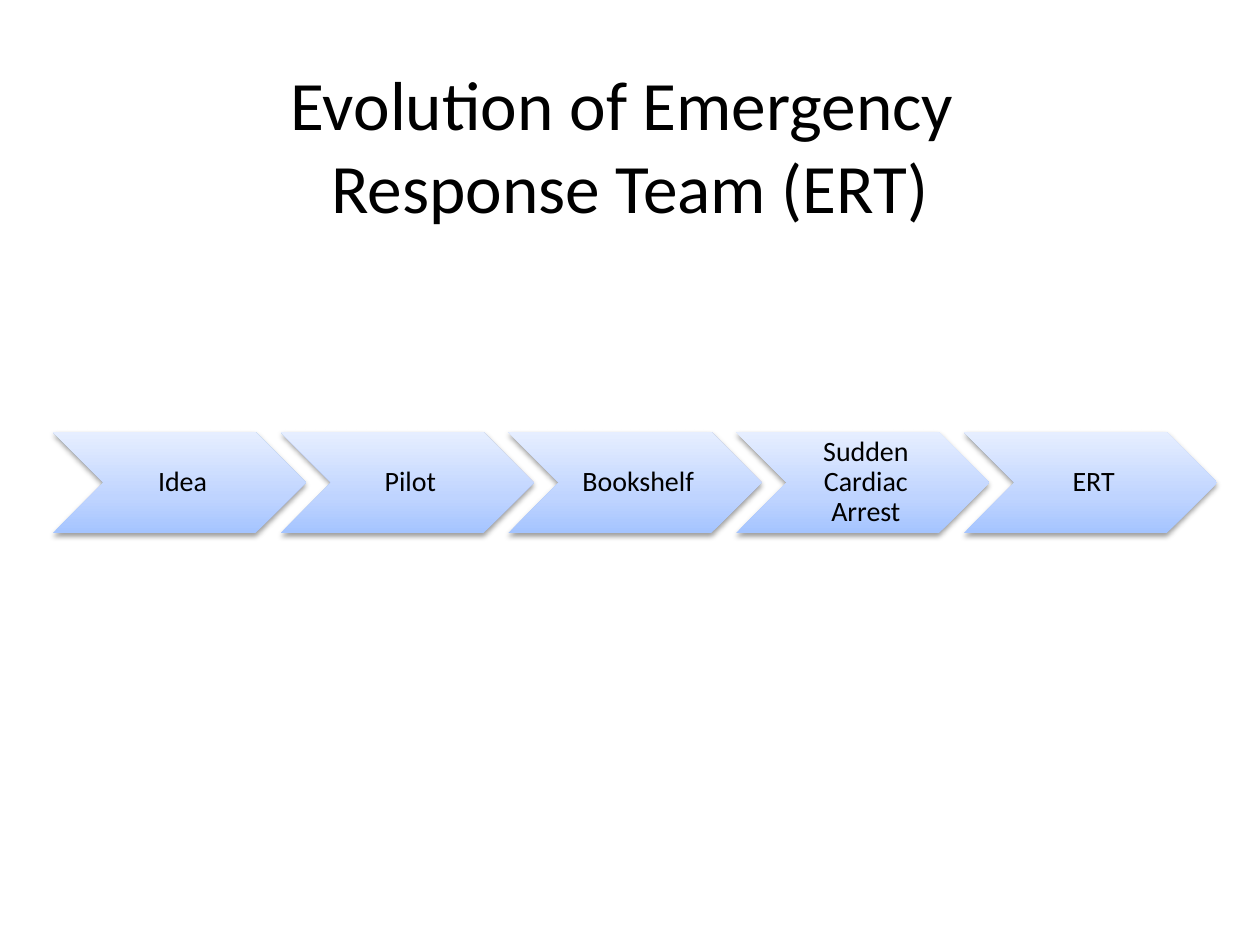
import pptx
import pptx.dml.color
import pptx.enum.shapes
import pptx.enum.text
import pptx.oxml
import pptx.oxml.ns
import pptx.util
from dataclasses import dataclass
from pptx.util import Inches


@dataclass(frozen=True)
class Theme:
    font: str = "Calibri"
    text: str = "000000"
    title_size: float = 39.6
    label_size: float = 16
    # Gradient stops in percent, running from bottom to top
    gradient: tuple = ((0, "A4C4FF"), (35, "BFD4FF"), (100, "E6EEFF"))
    shadow: str = "000000"


THEME = Theme()
NAMESPACE = pptx.oxml.ns.nsdecls("a")
STAGES = ["Idea", "Pilot", "Bookshelf", "Sudden Cardiac Arrest", "ERT"]


def set_attributes(target, values):
    for name, value in values.items():
        setattr(target, name, value)


def write_text(shape, text, size, margins, line_spacing):
    """Write one centred paragraph into a shape."""
    frame = shape.text_frame
    frame.text = text
    set_attributes(frame, {
        "word_wrap": True,
        "auto_size": pptx.enum.text.MSO_AUTO_SIZE.NONE,
        "vertical_anchor": pptx.enum.text.MSO_ANCHOR.MIDDLE,
        **{f"margin_{side}": Inches(value) for side, value in margins.items()},
    })
    paragraph = frame.paragraphs[0]
    set_attributes(paragraph, {
        "alignment": pptx.enum.text.PP_ALIGN.CENTER,
        "line_spacing": line_spacing,
    })
    for run in paragraph.runs:
        set_attributes(run.font, {"name": THEME.font, "size": pptx.util.Pt(size)})
        run.font.color.rgb = pptx.dml.color.RGBColor.from_string(THEME.text)


def style_chevron(shape):
    """Give a chevron its three-stop gradient and soft shadow, without outline."""
    shape.fill.gradient()
    shape.line.fill.background()
    shape.shadow.inherit = False
    properties = shape.element.spPr
    stops = "".join(
        f'<a:gs pos="{position * 1000}"><a:srgbClr val="{color}"/></a:gs>'
        for position, color in THEME.gradient)
    gradient = pptx.oxml.parse_xml(
        f'<a:gradFill {NAMESPACE} rotWithShape="1"><a:gsLst>{stops}</a:gsLst>'
        '<a:lin ang="16200000" scaled="0"/></a:gradFill>')
    properties.replace(properties.find(pptx.oxml.ns.qn("a:gradFill")), gradient)
    shadow = pptx.oxml.parse_xml(
        f'<a:outerShdw {NAMESPACE} blurRad="40000" dist="20000" dir="5400000" '
        f'rotWithShape="0"><a:srgbClr val="{THEME.shadow}">'
        '<a:alpha val="38000"/></a:srgbClr></a:outerShdw>')
    properties.find(pptx.oxml.ns.qn("a:effectLst")).append(shadow)


def add_title(slide, left, top, width, height):
    title = slide.shapes.title
    set_attributes(title, {
        "left": Inches(left), "top": Inches(top),
        "width": Inches(width), "height": Inches(height),
    })
    write_text(title, "Evolution of Emergency \vResponse Team (ERT)",
               THEME.title_size, {}, 1.0)


def add_process(slide, stages, left, top, width, height):
    """Fill the box with equal chevrons, each overlapping the next by a tenth."""
    group = slide.shapes.add_group_shape()
    chevron_width = width / (len(stages) - 0.1 * (len(stages) - 1))
    point = height / 2
    margins = {"left": 0.07, "right": 0.02, "top": 0.02, "bottom": 0.02}
    for index, stage in enumerate(stages):
        x = left + index * chevron_width * 0.9
        chevron = group.shapes.add_shape(
            pptx.enum.shapes.MSO_SHAPE.CHEVRON, Inches(x), Inches(top),
            Inches(chevron_width), Inches(height))
        style_chevron(chevron)
        # The label sits between the notch and the point
        label = group.shapes.add_textbox(
            Inches(x + point), Inches(top),
            Inches(chevron_width - 2 * point), Inches(height))
        write_text(label, stage, THEME.label_size, margins, 0.9)


def main():
    presentation = pptx.Presentation()
    set_attributes(presentation, {
        "slide_width": Inches(10), "slide_height": Inches(7.5)})
    # Title Only layout
    slide = presentation.slides.add_slide(presentation.slide_layouts[5])
    add_title(slide, 0.5, 0.42, 9, 1.45)
    add_process(slide, STAGES, 0.42, 3.43, 9.24, 0.8)
    presentation.save("out.pptx")


if __name__ == "__main__":
    main()
